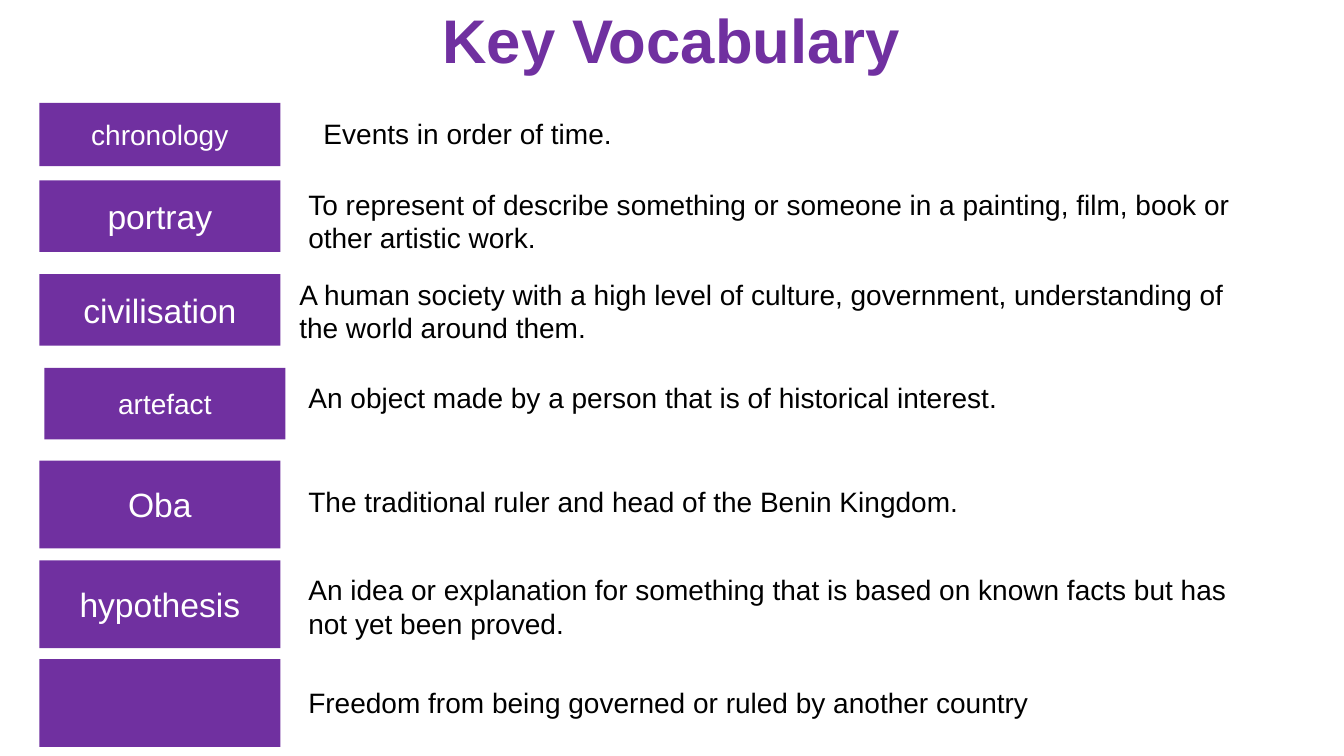
from dataclasses import dataclass

from pptx import Presentation
from pptx import util as u
from pptx.dml.color import RGBColor
from pptx.enum import shapes, text

EMU_PER_PX = 9144


def px(length):
    return u.Emu(length * EMU_PER_PX)


@dataclass(frozen=True)
class Theme:
    font: str = "Arial"
    purple: str = "7030A0"
    white: str = "FFFFFF"
    black: str = "000000"
    title_size: int = 44
    term_size: int = 24
    small_size: int = 20


class VocabularySlide:
    def __init__(self, deck, theme):
        self.theme = theme
        self.slide = deck.slides.add_slide(deck.slide_layouts[5])

    def place(self, part, box):
        for side, length in zip(("left", "top", "width", "height"), box):
            setattr(part, side, px(length))

    def paint(self, part, color):
        part.fill.solid()
        part.fill.fore_color.rgb = RGBColor.from_string(color)

    def set_words(self, part, words, size, color, align, anchor, bold=False):
        frame = part.text_frame
        frame_format = {
            "word_wrap": True,
            "auto_size": text.MSO_AUTO_SIZE.NONE,
            "vertical_anchor": anchor,
        }
        for name, value in frame_format.items():
            setattr(frame, name, value)
        paragraph = frame.paragraphs[0]
        paragraph.alignment = align
        run = paragraph.add_run()
        run.text = words
        font_format = {"name": self.theme.font, "size": u.Pt(size), "bold": bold}
        for name, value in font_format.items():
            setattr(run.font, name, value)
        run.font.color.rgb = RGBColor.from_string(color)

    def title(self, words, box):
        heading = self.slide.shapes.title
        self.place(heading, box)
        self.set_words(heading, words, self.theme.title_size, self.theme.purple,
                       text.PP_ALIGN.CENTER, text.MSO_ANCHOR.MIDDLE, bold=True)

    def term(self, word, size, box):
        label = self.slide.shapes.add_shape(
            shapes.MSO_SHAPE.RECTANGLE, *map(px, box))
        label.shadow.inherit = False
        label.line.fill.background()
        self.paint(label, self.theme.purple)
        if word:
            self.set_words(label, word, size, self.theme.white,
                           text.PP_ALIGN.CENTER, text.MSO_ANCHOR.MIDDLE)

    def definition(self, words, box):
        meaning = self.slide.shapes.add_textbox(*map(px, box))
        self.paint(meaning, self.theme.white)
        self.set_words(meaning, words, self.theme.small_size, self.theme.black,
                       text.PP_ALIGN.LEFT, text.MSO_ANCHOR.TOP)


def main():
    theme = Theme()
    large, small = theme.term_size, theme.small_size
    term_width = 239
    vocabulary = [
        ("chronology", small, (39, 102, 63),
         "Events in order of time.", (311, 111, 1022, 77)),
        ("portray", large, (39, 179, 71),
         "To represent of describe something or someone in a painting, "
         "film, book or other artistic work.", (296, 181, 944, 77)),
        ("civilisation", large, (39, 272, 71),
         "A human society with a high level of culture, government, "
         "understanding of the world around them.", (287, 270, 953, 77)),
        ("artefact", small, (44, 365, 71),
         "An object made by a person that is of historical interest.",
         (296, 373, 1015, 77)),
        ("Oba", large, (39, 457, 87),
         "The traditional ruler and head of the Benin Kingdom.",
         (296, 476, 693, 44)),
        ("hypothesis", large, (39, 556, 87),
         "An idea or explanation for something that is based on known "
         "facts but has not yet been proved.", (296, 563, 933, 77)),
        ("", large, (39, 654, 87),
         "Freedom from being governed or ruled by another country",
         (296, 675, 783, 33)),
    ]

    deck = Presentation()
    deck.slide_width, deck.slide_height = px(1333), px(750)
    page = VocabularySlide(deck, theme)
    page.title("Key Vocabulary", (253, -24, 826, 126))
    for word, size, (left, top, height), meaning, meaning_box in vocabulary:
        page.term(word, size, (left, top, term_width, height))
        page.definition(meaning, meaning_box)
    deck.save("out.pptx")


if __name__ == "__main__":
    main()
